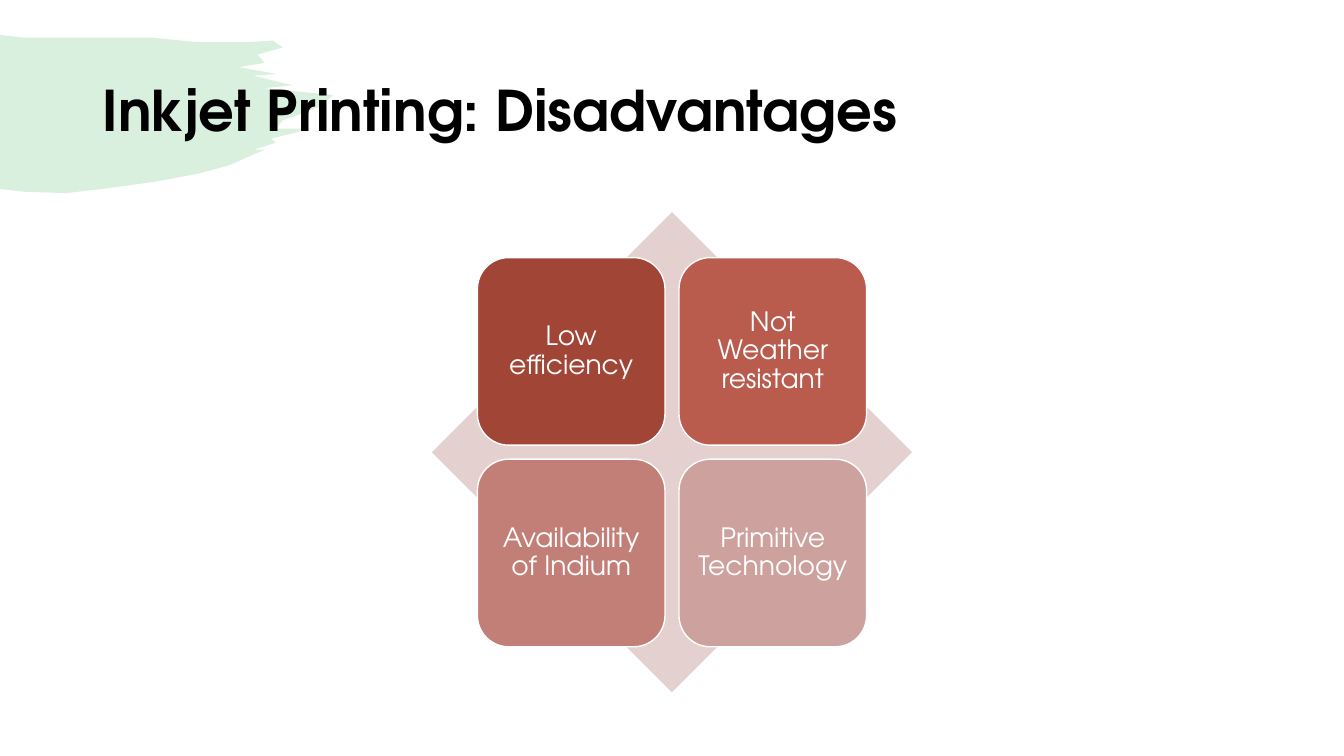
from dataclasses import dataclass

from lxml.etree import SubElement
from pptx import Presentation
from pptx.dml.color import RGBColor
from pptx.enum.shapes import MSO_SHAPE
from pptx.enum.text import MSO_ANCHOR, MSO_AUTO_SIZE, PP_ALIGN
from pptx.oxml.ns import qn
from pptx.util import Pt


@dataclass(frozen=True)
class Theme:
    font: str = "TeX Gyre Adventor"
    title_size: float = 40
    tile_size: float = 19
    ink: str = "000000"
    white: str = "FFFFFF"
    brush: str = "47B662"
    brush_alpha: int = 20000
    diamond: str = "E4D0CE"


THEME = Theme()
CENTER_X, CENTER_Y = 480, 323
DIAMOND, TILE, GAP = 343, 134, 10
TILES = [
    ("Low efficiency", "A14636"),
    ("Not Weather resistant", "BA5C4D"),
    ("Availability of Indium", "C27F77"),
    ("Primitive Technology", "CDA19D"),
]
BRUSH_OUTLINE = [
    (18, 27), (73, 27), (109, 27), (140, 30), (179, 30), (195, 29),
    (202, 34), (184, 39), (189, 45), (171, 48), (198, 53), (181, 54),
    (197, 58), (209, 61), (189, 63), (238, 68), (229, 76), (216, 81),
    (202, 86), (197, 92), (222, 92), (194, 99), (197, 102), (181, 107),
    (189, 107), (164, 118), (142, 124), (110, 130), (73, 135), (47, 138),
    (17, 137), (0, 135),
]


def format_all(obj, values):
    """Set each named attribute of an object."""
    for name, value in values.items():
        setattr(obj, name, value)


def paint(sp, color, line=None):
    """Give a shape a solid fill, an optional line and no shadow."""
    sp.shadow.inherit = False
    sp.fill.solid()
    sp.fill.fore_color.rgb = RGBColor.from_string(color)
    if line:
        sp.line.color.rgb = RGBColor.from_string(line)
        sp.line.width = Pt(1)
    else:
        sp.line.fill.background()


def write(sp, text, size, color, bold, align, inset):
    """Put one formatted paragraph in a shape."""
    tf = sp.text_frame
    tf.text = text
    format_all(tf, {
        "word_wrap": True, "auto_size": MSO_AUTO_SIZE.NONE,
        "vertical_anchor": MSO_ANCHOR.MIDDLE,
        "margin_left": Pt(inset), "margin_right": Pt(inset),
        "margin_top": Pt(inset), "margin_bottom": Pt(inset),
    })
    p = tf.paragraphs[0]
    format_all(p, {"alignment": align, "line_spacing": 0.9})
    font = p.runs[0].font
    format_all(font, {"name": THEME.font, "size": Pt(size), "bold": bold})
    font.color.rgb = RGBColor.from_string(color)


def add_brush(s):
    """Add the translucent brush stroke behind the title."""
    builder = s.shapes.build_freeform(0, 25, scale=Pt(1))
    builder.add_line_segments(BRUSH_OUTLINE, close=True)
    sp = builder.convert_to_shape()
    paint(sp, THEME.brush)
    color = sp.element.spPr.find(qn("a:solidFill"))[0]
    SubElement(color, qn("a:alpha"), val=str(THEME.brush_alpha))
    s.shapes.title.element.addprevious(sp.element)


def add_title(s, text):
    """Place and format the title placeholder."""
    sp = s.shapes.title
    format_all(sp, {"left": Pt(66), "top": Pt(29),
                    "width": Pt(828), "height": Pt(104)})
    write(sp, text, THEME.title_size, THEME.ink, True, PP_ALIGN.LEFT, 7.2)


def add_preset(s, kind, left, top, size, color, line=None):
    """Add a square preset shape."""
    sp = s.shapes.add_shape(kind, Pt(left), Pt(top), Pt(size), Pt(size))
    paint(sp, color, line)
    return sp


def add_matrix(s):
    """Add the diamond and its two-by-two grid of tiles."""
    add_preset(s, MSO_SHAPE.DIAMOND, CENTER_X - DIAMOND / 2,
               CENTER_Y - DIAMOND / 2, DIAMOND, THEME.diamond)
    offset = TILE + GAP / 2
    for i, (text, color) in enumerate(TILES):
        row, col = divmod(i, 2)
        sp = add_preset(s, MSO_SHAPE.ROUNDED_RECTANGLE,
                        CENTER_X - offset + col * (TILE + GAP),
                        CENTER_Y - offset + row * (TILE + GAP),
                        TILE, color, THEME.white)
        write(sp, text, THEME.tile_size, THEME.white, False,
              PP_ALIGN.CENTER, 5.7)


def main():
    """Build and save the slide."""
    prs = Presentation()
    format_all(prs, {"slide_width": Pt(960), "slide_height": Pt(540)})
    s = prs.slides.add_slide(prs.slide_layouts[5])
    add_title(s, "Inkjet Printing: Disadvantages")
    add_brush(s)
    add_matrix(s)
    prs.save("out.pptx")


if __name__ == "__main__":
    main()
